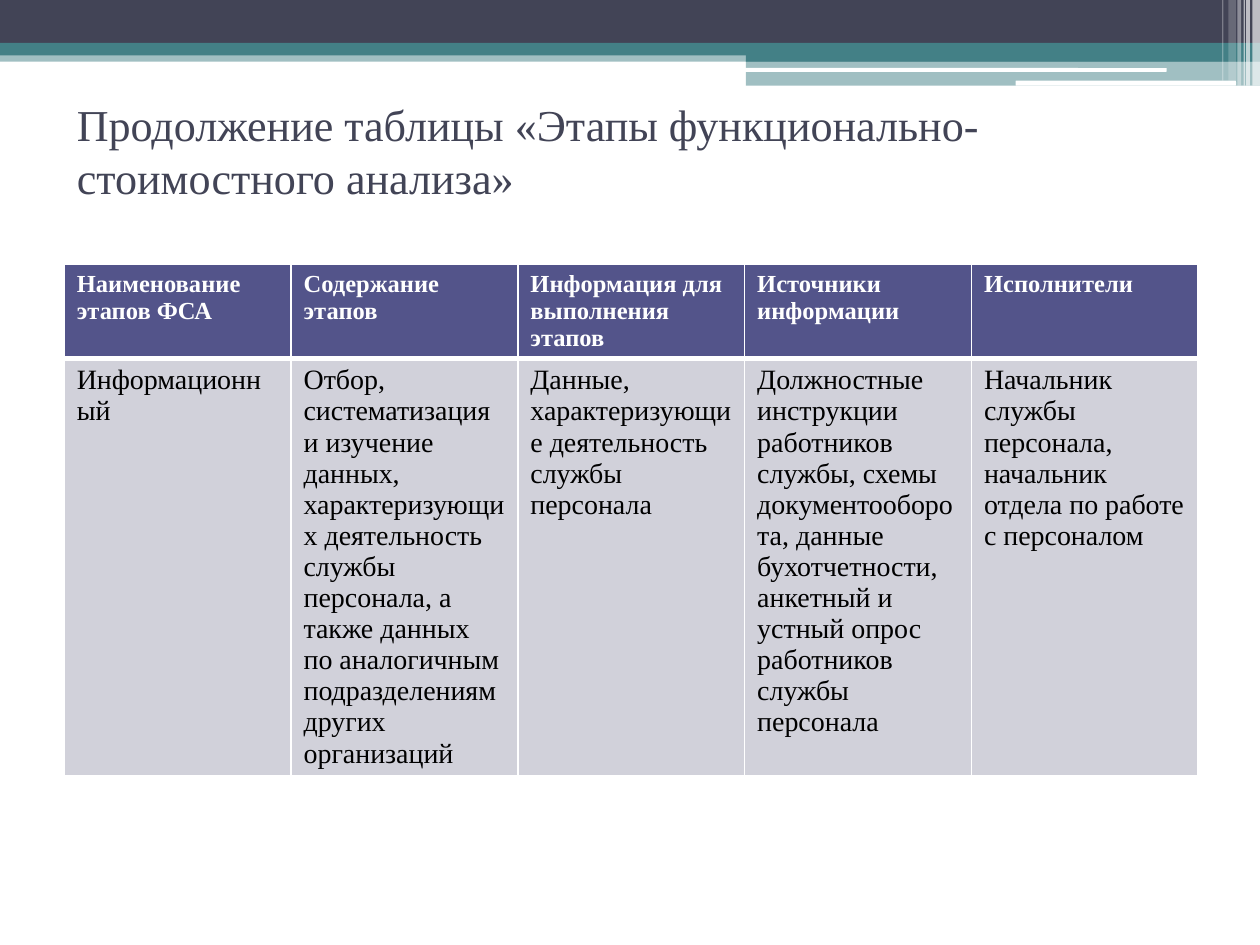
from lxml.etree import SubElement
from pptx import Presentation
from pptx.dml.color import RGBColor
from pptx.enum.shapes import MSO_SHAPE
from pptx.enum.text import MSO_ANCHOR, MSO_AUTO_SIZE, PP_ALIGN
from pptx.oxml import parse_xml
from pptx.oxml.ns import nsdecls, qn
from pptx.util import Inches, Pt

COLORS = {"dark": "424456", "teal": "438086", "white": "FFFFFF",
          "header": "53548A", "body": "D1D1DA", "black": "000000"}
FONT = "Times New Roman"
TITLE = "Продолжение таблицы «Этапы функционально-стоимостного анализа»"
HEADERS = ["Наименование этапов ФСА", "Содержание этапов",
           "Информация для выполнения этапов", "Источники информации",
           "Исполнители"]
STAGE = [
    "Информационный",
    "Отбор, систематизация и изучение данных, характеризующих деятельность "
    "службы персонала, а также данных по аналогичным подразделениям других "
    "организаций",
    "Данные, характеризующие деятельность службы персонала",
    "Должностные инструкции работников службы, схемы документооборота, данные "
    "бухотчетности, анкетный и устный опрос работников службы персонала",
    "Начальник службы персонала, начальник отдела по работе с персоналом",
]
BANDS = [
    (0, 0.4, 10, 0.09, "teal", 50),
    (0, 0, 10, 0.34, "dark", 100),
    (0, 0.34, 10, 0.1, "teal", 100),
    (5.92, 0.39, 4.08, 0.1, "teal", 100),
    (5.92, 0.48, 4.08, 0.2, "teal", 50),
]
RULES = [
    (5.91, 0.54, 3.35, 0.03, "white", 100),
    (8.06, 0.64, 1.75, 0.04, "white", 100),
]
STRIPES = [(9.94, 0.06, 0.68, 65), (9.89, 0.03, 0.68, 65),
           (9.87, 0.01, 0.68, 60), (9.82, 0.03, 0.68, 40),
           (9.75, 0.06, 0.64, 20), (9.7, 0.01, 0.64, 30)]
ROWS = [
    (HEADERS, 0.74, "header", dict(size=14, color="white", bold=True), 3),
    (STAGE, 3.3, "body", dict(size=16, color="black"), 1),
]


def rgb(name):
    return RGBColor.from_string(COLORS[name])


def write(tf, text, size, color, bold=False):
    tf.word_wrap = True
    p = tf.paragraphs[0]
    p.alignment = PP_ALIGN.LEFT
    r = p.add_run()
    r.text = text
    r.font.name = FONT
    r.font.size = Pt(size)
    r.font.bold = bold
    r.font.color.rgb = rgb(color)


def add_bar(s, kind, x, y, w, h, color, opacity):
    sp = s.shapes.add_shape(kind, Inches(x), Inches(y), Inches(w), Inches(h))
    sp.shadow.inherit = False
    sp.line.fill.background()
    sp.fill.solid()
    sp.fill.fore_color.rgb = rgb(color)
    if opacity < 100:
        clr = sp.fill._xPr.find(qn("a:solidFill"))[0]
        SubElement(clr, qn("a:alpha"), val=str(opacity * 1000))


def set_borders(cell, **widths):
    tcPr = cell._tc.get_or_add_tcPr()
    for i, (side, width) in enumerate(widths.items()):
        tcPr.insert(i, parse_xml(
            f'<a:ln{side} {nsdecls("a")} w="{Pt(width)}"><a:solidFill>'
            f'<a:srgbClr val="{COLORS["white"]}"/></a:solidFill></a:ln{side}>'))


def add_stage_table(s):
    n = len(HEADERS)
    height = sum(row[1] for row in ROWS)
    table = s.shapes.add_table(len(ROWS), n, Inches(0.51), Inches(2.1),
                               Inches(9), Inches(height)).table
    table.horz_banding = False
    for col in table.columns:
        col.width = Inches(9 / n)
    top = 1
    for i, (texts, h, fill, fmt, bottom) in enumerate(ROWS):
        table.rows[i].height = Inches(h)
        for j, text in enumerate(texts):
            cell = table.cell(i, j)
            write(cell.text_frame, text, **fmt)
            cell.fill.solid()
            cell.fill.fore_color.rgb = rgb(fill)
            set_borders(cell, L=1, R=1, T=top, B=bottom)
        top = bottom


def main():
    prs = Presentation()
    prs.slide_width, prs.slide_height = Inches(10), Inches(7.5)
    s = prs.slides.add_slide(prs.slide_layouts[5])
    for band in BANDS:
        add_bar(s, MSO_SHAPE.RECTANGLE, *band)
    for rule in RULES:
        add_bar(s, MSO_SHAPE.ROUNDED_RECTANGLE, *rule)
    for x, w, h, opacity in STRIPES:
        add_bar(s, MSO_SHAPE.RECTANGLE, x, 0, w, h, "white", opacity)
    title = s.shapes.title
    title.left, title.top = Inches(0.51), Inches(0.68)
    title.width, title.height = Inches(9), Inches(1.02)
    tf = title.text_frame
    tf.auto_size = MSO_AUTO_SIZE.NONE
    tf.vertical_anchor = MSO_ANCHOR.MIDDLE
    write(tf, TITLE, size=25.2, color="dark")
    add_stage_table(s)
    prs.save("out.pptx")


if __name__ == "__main__":
    main()
